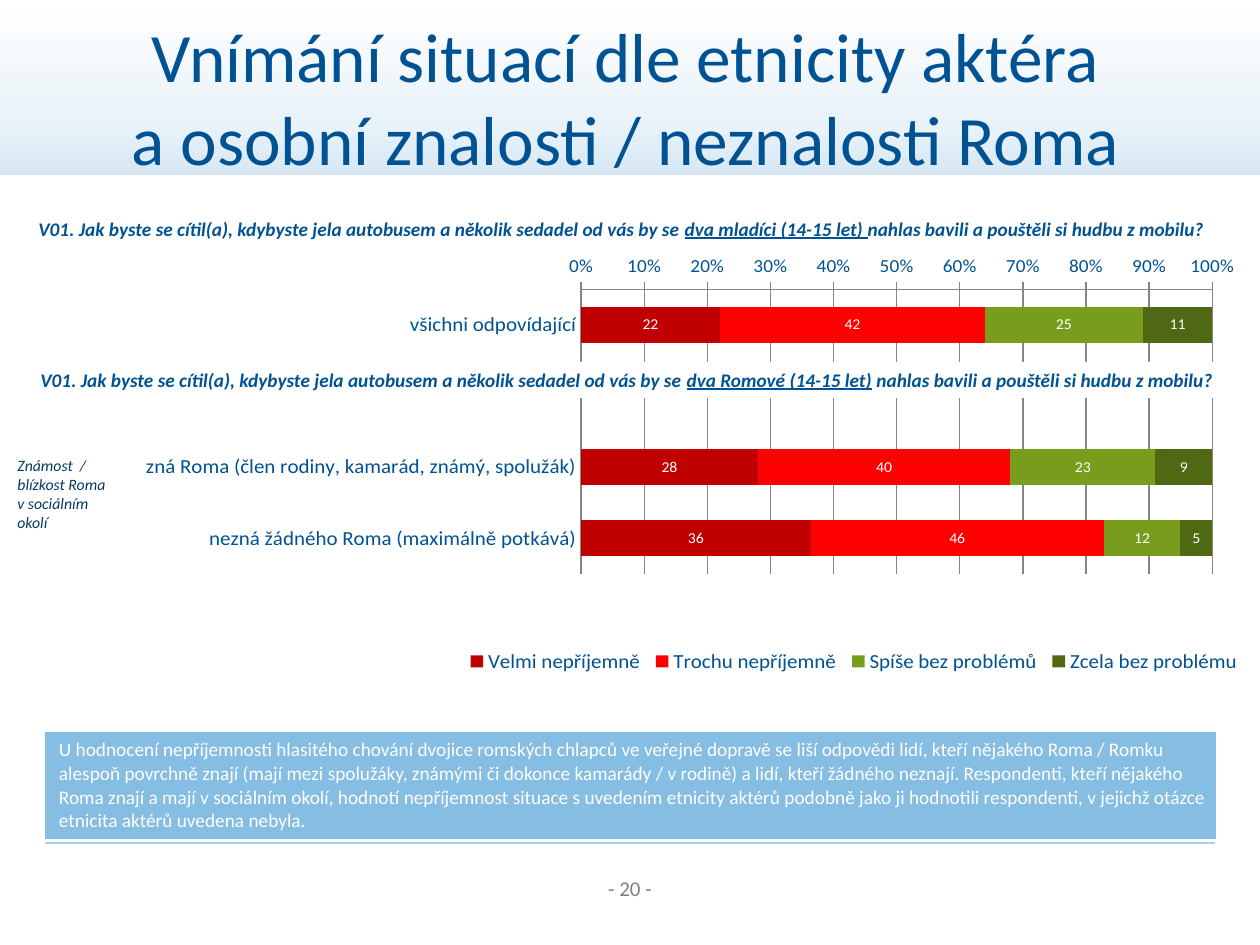
from lxml import etree
from pptx import Presentation
from pptx.chart.data import CategoryChartData as ChartData
from pptx.dml.color import RGBColor
from pptx.enum.chart import XL_AXIS_CROSSES as Cross
from pptx.enum.chart import XL_CHART_TYPE as Kind
from pptx.enum.chart import XL_LEGEND_POSITION as Side
from pptx.enum.chart import XL_TICK_MARK as Tick
from pptx.enum.shapes import MSO_CONNECTOR as Link
from pptx.enum.shapes import MSO_SHAPE as Form
from pptx.enum.text import MSO_ANCHOR as Anchor
from pptx.enum.text import PP_ALIGN as Align
from pptx.oxml import parse_xml
from pptx.oxml.ns import nsdecls, qn
from pptx.util import Pt

SCALE = 914400 / 126
FONT, BLUE, WHITE, GRAY = "Calibri", "005293", "FFFFFF", "868686"


def px(n):
    return round(n * SCALE)


def color(code):
    return RGBColor.from_string(code)


def style(font, size, code, **form):
    font.color.rgb = color(code)
    form = {"name": FONT, "size": Pt(size), **form}
    for key, val in form.items():
        setattr(font, key, val)


def write(frame, runs, size, code, align=Align.LEFT, **form):
    """Fill a frame with one paragraph; runs are (text, underlined) pairs."""
    frame.word_wrap = True
    para = frame.paragraphs[0]
    para.alignment = align
    for text, under in runs:
        for i, line in enumerate(text.split("\n")):
            if i:
                para.add_line_break()
            run = para.add_run()
            run.text = line
            style(run.font, size, code, underline=under, **form)


def text(slide, box, words, size, code, align=Align.LEFT, anchor=Anchor.TOP, **form):
    frame = slide.shapes.add_textbox(*map(px, box)).text_frame
    frame.vertical_anchor = anchor
    write(frame, [(words, False)], size, code, align, **form)


def header(slide, box):
    x, y, w, h = box
    band = slide.shapes.add_shape(Form.RECTANGLE, *map(px, box))
    band.shadow.inherit = False
    band.line.fill.background()
    # Three-stop fade from top to bottom
    stops = "".join(
        f'<a:gs pos="{pos}000"><a:srgbClr val="{code}"/></a:gs>'
        for pos, code in ((0, WHITE), (73, "E8F2F9"), (100, "D7E7F4")))
    band._element.spPr.find(qn("a:prstGeom")).addnext(parse_xml(
        f'<a:gradFill {nsdecls("a")} rotWithShape="1"><a:gsLst>{stops}</a:gsLst>'
        '<a:lin ang="5400000" scaled="0"/></a:gradFill>'))
    text(slide, (x + 25, y + 18, w - 59, h - 18),
         "Vnímání situací dle etnicity aktéra\na osobní znalosti / neznalosti Roma",
         39.6, BLUE, Align.CENTER, Anchor.MIDDLE)


def question(slide, box, who, rest):
    shape = slide.shapes.add_shape(Form.RECTANGLE, *map(px, box))
    shape.shadow.inherit = False
    shape.fill.solid()
    shape.fill.fore_color.rgb = color(WHITE)
    shape.line.fill.background()
    shape.text_frame.vertical_anchor = Anchor.TOP
    start = ("V01. Jak byste se cítil(a), kdybyste jela autobusem "
             "a několik sedadel od vás by se ")
    write(shape.text_frame, [(start, False), (who, True), (rest, False)],
          11, BLUE, bold=True, italic=True)


def layout(parent, index, frame, inner=False):
    """Give a chart part a fixed place, in fractions of the chart."""
    for old in parent.findall(qn("c:layout")):
        parent.remove(old)
    node = parse_xml(f'<c:layout {nsdecls("c")}><c:manualLayout/></c:layout>')
    parts = [("layoutTarget", "inner")] if inner else []
    parts += [("xMode", "edge"), ("yMode", "edge"), *zip("xywh", frame)]
    for tag, val in parts:
        etree.SubElement(node[0], qn(f"c:{tag}")).set("val", str(val))
    parent.insert(index, node)


def bars(slide, box):
    data = ChartData(number_format="#,##0")
    data.categories = ["všichni odpovídající", "",
                       "zná Roma (člen rodiny, kamarád, známý, spolužák)",
                       "nezná žádného Roma (maximálně potkává)"]
    series = [("Velmi nepříjemně", "C00000", (22, None, 28, 36)),
              ("Trochu nepříjemně", "FF0000", (42, None, 40, 46)),
              ("Spíše bez problémů", "789D1D", (25, None, 23, 12)),
              ("Zcela bez problému", "506814", (11, None, 9, 5))]
    for name, _, vals in series:
        data.add_series(name, vals)
    chart = slide.shapes.add_chart(Kind.BAR_STACKED_100, *map(px, box), data).chart
    chart.has_title = False
    style(chart.font, 18, "000000")

    # Bars and their labels
    plot = chart.plots[0]
    plot.gap_width, plot.overlap, plot.vary_by_categories = 100, 100, False
    for item, (_, code, _) in zip(plot.series, series):
        item.format.fill.solid()
        item.format.fill.fore_color.rgb = color(code)
        tags = item.data_labels
        style(tags.font, 9, WHITE)
        look = {"show_value": True, "number_format": "#,##0",
                "number_format_is_linked": False}
        for key, val in look.items():
            setattr(tags, key, val)

    # Axes
    cat, val = chart.category_axis, chart.value_axis
    cat.reverse_order = True
    cat.crosses = Cross.MAXIMUM
    val.has_major_gridlines = True
    val.tick_labels.number_format = "0%"
    val.tick_labels.number_format_is_linked = False
    val.minimum_scale, val.maximum_scale, val.major_unit = 0, 1, 0.1
    for axis, size, tick in ((cat, 12, Tick.NONE), (val, 11, Tick.OUTSIDE)):
        style(axis.tick_labels.font, size, BLUE)
        axis.major_tick_mark, axis.minor_tick_mark = tick, Tick.NONE
    for part in (cat, val, val.major_gridlines):
        part.format.line.color.rgb = color(GRAY)
        part.format.line.width = Pt(0.75)

    # Legend and plot places
    chart.has_legend = True
    key = chart.legend
    key.position, key.include_in_layout = Side.BOTTOM, False
    style(key.font, 12, BLUE)
    layout(key._element, 1, (0.37, 0.88, 0.63, 0.08))
    area = chart._chartSpace.chart.plotArea
    layout(area, 0, (0.466, 0.033, 0.507, 0.678), True)


def summary(slide, box):
    table = slide.shapes.add_table(1, 1, *map(px, box)).table
    table.first_row = table.horz_banding = False
    cell = table.cell(0, 0)
    look = {"margin_left": px(15), "margin_right": 0, "margin_top": 0,
            "margin_bottom": 0, "vertical_anchor": Anchor.MIDDLE}
    for key, val in look.items():
        setattr(cell, key, val)
    cell.fill.solid()
    cell.fill.fore_color.rgb = color("86BDE2")
    words = (
        "U hodnocení nepříjemnosti hlasitého chování dvojice romských chlapců ve "
        "veřejné dopravě se liší odpovědi lidí, kteří nějakého Roma / Romku alespoň "
        "povrchně znají (mají mezi spolužáky, známými či dokonce kamarády / v rodině) "
        "a lidí, kteří žádného neznají. Respondenti, kteří nějakého Roma znají a mají "
        "v sociálním okolí, hodnotí nepříjemnost situace s uvedením etnicity aktérů "
        "podobně jako ji hodnotili respondenti, v jejichž otázce etnicita aktérů "
        "uvedena nebyla.")
    write(cell.text_frame, [(words, False)], 11, WHITE)


def footer(slide, box):
    x, y, w, h = box
    rule = slide.shapes.add_connector(Link.STRAIGHT, px(x), px(y), px(x + w), px(y))
    rule.line.color.rgb = color("AFCFEA")
    rule.line.width = Pt(0.75)
    etree.SubElement(rule._element.spPr, qn("a:effectLst"))
    text(slide, (x + w // 2 - 79, y + 26, 158, h - 26), "- 20 -", 12, "808080",
         Align.CENTER)


def main():
    deck = Presentation()
    deck.slide_width, deck.slide_height = px(1260), px(945)
    slide = deck.slides.add_slide(deck.slide_layouts[6])
    header(slide, (0, 0, 1260, 175))
    footer(slide, (45, 843, 1170, 64))
    summary(slide, (44, 731, 1173, 109))
    rest = "nahlas bavili a pouštěli si hudbu z mobilu?"
    question(slide, (26, 211, 1221, 36), "dva mladíci (14-15 let) ", rest)
    bars(slide, (1, 255, 1245, 440))
    text(slide, (5, 450, 118, 90), "Známost  / blízkost Roma v sociálním okolí",
         9, "043B5D", italic=True)
    question(slide, (28, 362, 1221, 36), "dva Romové (14-15 let)", " " + rest)
    deck.save("out.pptx")


if __name__ == "__main__":
    main()
